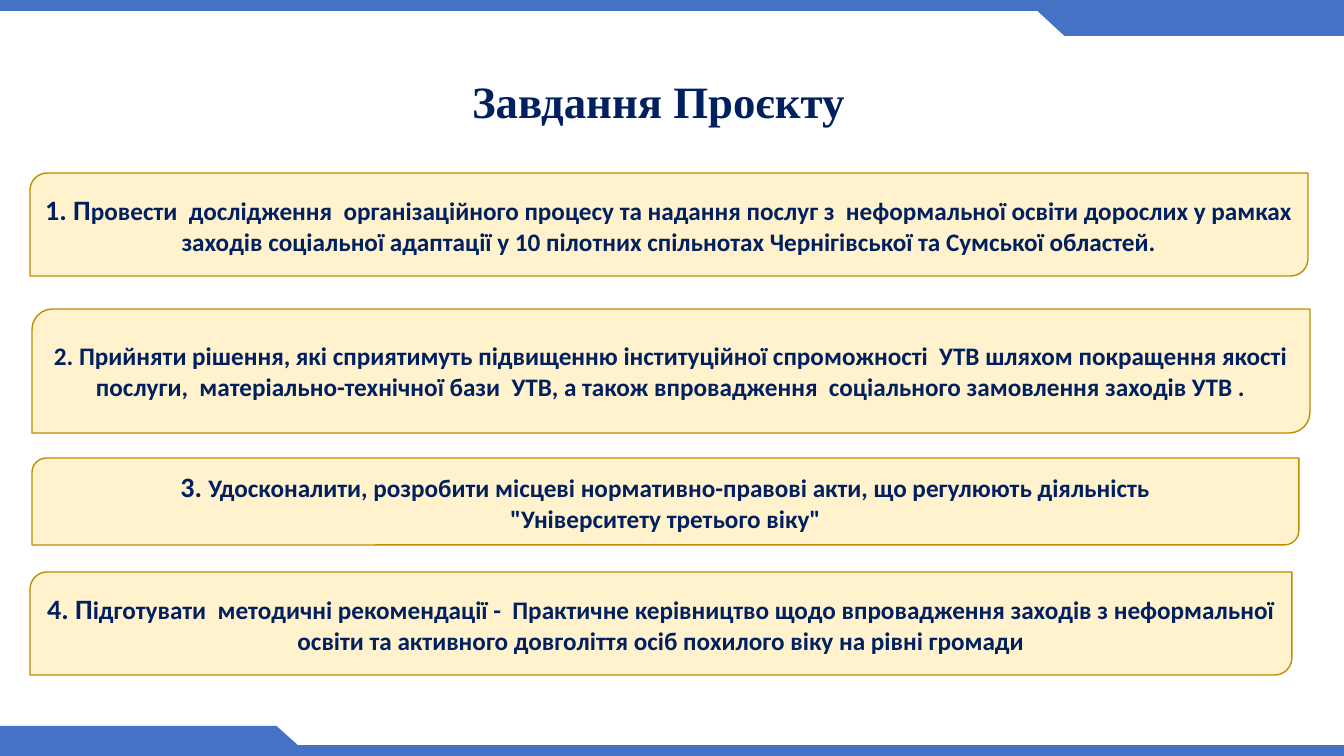
from typing import NamedTuple

from pptx import Presentation
from pptx.dml.color import RGBColor
from pptx.enum.shapes import MSO_SHAPE
from pptx.enum.text import MSO_ANCHOR, MSO_AUTO_SIZE, PP_ALIGN
from pptx.util import Emu, Pt

EMU_PER_PX = 914400 / 100.8
BLUE, NAVY, CREAM, GOLD = "4472C4", "002060", "FFF2CC", "BD8E00"


class Box(NamedTuple):
    left: int
    top: int
    width: int
    height: int


class Band(NamedTuple):
    kind: MSO_SHAPE
    box: Box
    rotation: int = 0


class Task(NamedTuple):
    box: Box
    lead: str
    lines: list[str]


BANDS = [
    Band(MSO_SHAPE.RECTANGLE, Box(0, 0, 1344, 11)),
    Band(MSO_SHAPE.RECTANGLE, Box(0, 745, 1344, 11)),
    Band(MSO_SHAPE.RECTANGLE, Box(1064, 5, 280, 31)),
    Band(MSO_SHAPE.FLOWCHART_MERGE, Box(1030, 4, 67, 31)),
    Band(MSO_SHAPE.RECTANGLE, Box(0, 726, 276, 30)),
    Band(MSO_SHAPE.FLOWCHART_MERGE, Box(243, 726, 67, 30), 180),
]

TASKS = [
    Task(Box(30, 173, 1278, 103), "1. П", [
        "ровести  дослідження  організаційного процесу та надання послуг з  неформальної освіти "
        "дорослих у рамках заходів соціальної адаптації у 10 пілотних спільнотах Чернігівської "
        "та Сумської областей."]),
    Task(Box(32, 309, 1278, 124), "", [
        "2. Прийняти рішення, які сприятимуть підвищенню інституційної спроможності  УТВ шляхом "
        "покращення якості послуги,  матеріально-технічної бази  УТВ, а також впровадження  "
        "соціального замовлення заходів УТВ ."]),
    Task(Box(32, 458, 1267, 87), "3. ", [
        "Удосконалити, розробити місцеві нормативно-правові акти, що регулюють діяльність",
        "\"Університету третього віку\""]),
    Task(Box(30, 572, 1262, 103), "4. П", [
        "ідготувати  методичні рекомендації -  Практичне керівництво щодо впровадження заходів "
        "з неформальної освіти та активного довголіття осіб похилого віку на рівні громади"]),
]


def px(n: int) -> Emu:
    return Emu(round(n * EMU_PER_PX))


def color(value: str) -> RGBColor:
    return RGBColor.from_string(value)


def format_run(r, size: int, name: str) -> None:
    r.font.size = Pt(size)
    r.font.name = name
    r.font.bold = True
    r.font.color.rgb = color(NAVY)


def add_shape(s, kind: MSO_SHAPE, box: Box, fill: str):
    sp = s.shapes.add_shape(kind, *map(px, box))
    sp.shadow.inherit = False
    sp.fill.solid()
    sp.fill.fore_color.rgb = color(fill)
    sp.line.fill.background()
    return sp


def add_band(s, band: Band) -> None:
    sp = add_shape(s, band.kind, band.box, BLUE)
    sp.rotation = band.rotation


def set_title(s, text: str, box: Box) -> None:
    sp = s.shapes.title
    sp.left, sp.top, sp.width, sp.height = map(px, box)
    tf = sp.text_frame
    tf.text = text
    tf.vertical_anchor = MSO_ANCHOR.MIDDLE
    tf.auto_size = MSO_AUTO_SIZE.NONE
    p = tf.paragraphs[0]
    p.alignment = PP_ALIGN.CENTER
    p.line_spacing = 0.9
    format_run(p.runs[0], 32, "Times New Roman")


def add_task(s, task: Task) -> None:
    sp = add_shape(s, MSO_SHAPE.ROUND_2_DIAG_RECTANGLE, task.box, CREAM)
    sp.line.color.rgb = color(GOLD)
    sp.line.width = Pt(1)
    tf = sp.text_frame
    tf.word_wrap = True
    tf.vertical_anchor = MSO_ANCHOR.MIDDLE
    for i, line in enumerate(task.lines):
        p = tf.add_paragraph() if i else tf.paragraphs[0]
        p.alignment = PP_ALIGN.CENTER
        if task.lead and i == 0:
            r = p.add_run()
            r.text = task.lead
            format_run(r, 20, "Calibri")
        r = p.add_run()
        r.text = line
        format_run(r, 18, "Calibri")


def main() -> None:
    prs = Presentation()
    prs.slide_width, prs.slide_height = px(1344), px(756)
    s = prs.slides.add_slide(prs.slide_layouts[5])
    for band in BANDS:
        add_band(s, band)
    set_title(s, "Завдання Проєкту", Box(378, 70, 561, 68))
    for task in TASKS:
        add_task(s, task)
    prs.save("out.pptx")


if __name__ == "__main__":
    main()
